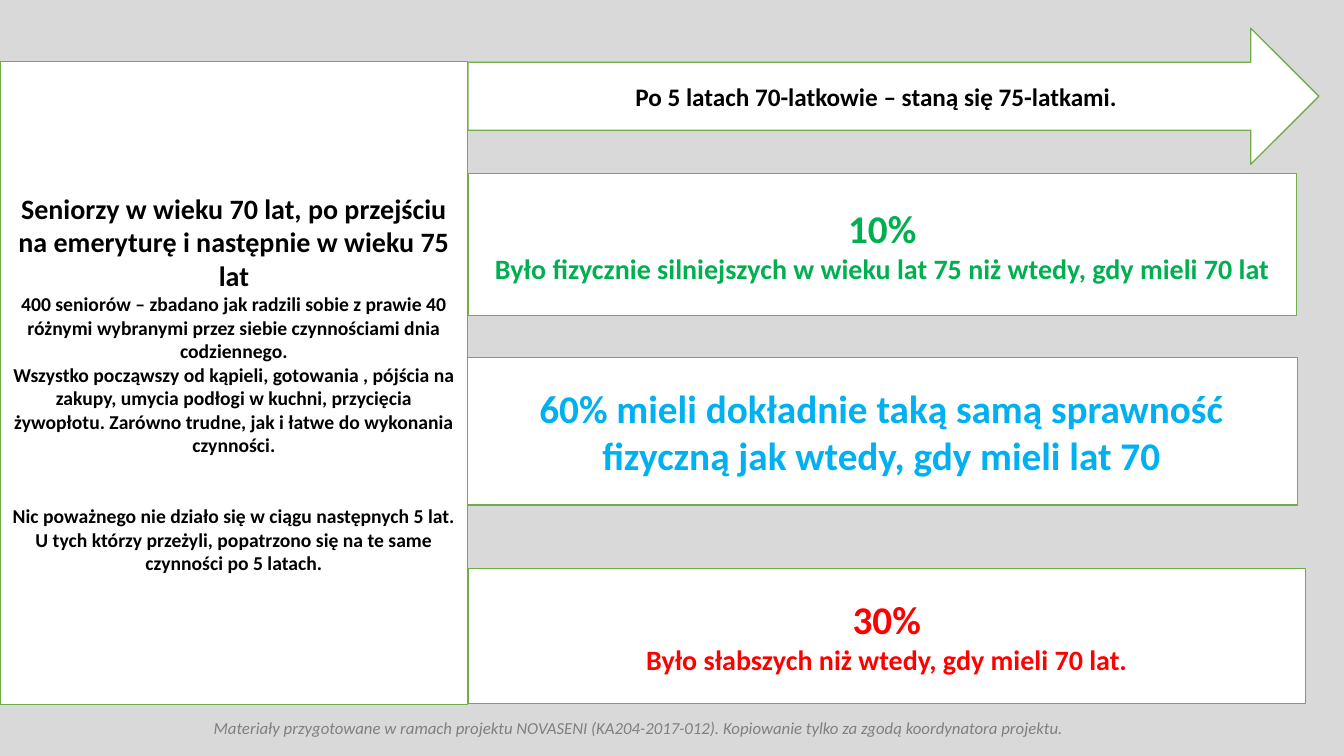
from pptx import Presentation
from pptx import util as u
from pptx.dml.color import RGBColor
from pptx.enum import shapes, text

WHITE = RGBColor(0xFF, 0xFF, 0xFF)
BLACK = RGBColor(0, 0, 0)
BACK = RGBColor(0xD9, 0xD9, 0xD9)
EDGE = RGBColor(0x70, 0xAD, 0x47)
GREEN = RGBColor(0x00, 0xB0, 0x50)
BLUE = RGBColor(0x00, 0xB0, 0xF0)
RED = RGBColor(0xFF, 0, 0)
GRAY = RGBColor(0x80, 0x80, 0x80)

RECT = shapes.MSO_SHAPE.RECTANGLE
ARROW = shapes.MSO_SHAPE.RIGHT_ARROW


class Board:
    """Holds the style and the slide being filled."""

    face = "Calibri"

    def __init__(self, deck):
        self.slide = deck.slides.add_slide(deck.slide_layouts[6])
        fill = self.slide.background.fill
        fill.solid()
        fill.fore_color.rgb = BACK

    def put_text(self, frame, lines, color, align, **style):
        """Each line is (words, size) or (words, size, space before)."""
        frame.word_wrap = True
        for i, (words, size, *gap) in enumerate(lines):
            para = frame.paragraphs[0] if i == 0 else frame.add_paragraph()
            para.alignment = align
            if gap:
                para.space_before = u.Pt(gap[0])
            run = para.add_run()
            run.text = words
            run.font.color.rgb = color
            form = {"name": self.face, "size": u.Pt(size), **style}
            for key, value in form.items():
                setattr(run.font, key, value)

    def panel(self, kind, box, lines, color):
        shape = self.slide.shapes.add_shape(kind, *map(u.Inches, box))
        shape.shadow.inherit = False
        shape.fill.solid()
        shape.fill.fore_color.rgb = WHITE
        shape.line.color.rgb = EDGE
        shape.line.width = u.Pt(1)
        shape.text_frame.vertical_anchor = text.MSO_ANCHOR.MIDDLE
        self.put_text(shape.text_frame, lines, color,
                      text.PP_ALIGN.CENTER, bold=True)

    def note(self, box, words, size):
        label = self.slide.shapes.add_textbox(*map(u.Inches, box))
        self.put_text(label.text_frame, [(words, size)], GRAY,
                      text.PP_ALIGN.LEFT, italic=True)


def main():
    deck = Presentation()
    deck.slide_width = u.Inches(13.33)
    deck.slide_height = u.Inches(7.5)
    board = Board(deck)

    # Results after five years
    results = [
        ((4.64, 1.72, 8.22, 1.41), GREEN,
         [("10%", 28),
          ("Było fizycznie silniejszych w wieku lat 75 niż wtedy, "
           "gdy mieli 70 lat", 20)]),
        ((4.61, 3.55, 8.26, 1.46), BLUE,
         [("60% mieli dokładnie taką samą sprawność fizyczną "
           "jak wtedy, gdy mieli lat 70", 28)]),
        ((4.64, 5.64, 8.31, 1.34), RED,
         [("30%", 28),
          ("Było słabszych niż wtedy, gdy mieli 70 lat.", 20)]),
    ]
    for box, color, lines in results:
        board.panel(RECT, box, lines, color)

    # Time arrow
    board.panel(ARROW, (4.64, 0.28, 8.44, 1.35),
                [("Po 5 latach 70-latkowie – staną się 75-latkami.", 18)],
                BLACK)

    # Study group
    board.panel(RECT, (0, 0.61, 4.64, 6.38), [
        ("Seniorzy w wieku 70 lat, po przejściu na emeryturę "
         "i następnie w wieku 75 lat", 20),
        ("400 seniorów – zbadano jak radzili sobie z prawie 40 różnymi "
         "wybranymi przez siebie czynnościami dnia codziennego.", 14),
        ("Wszystko począwszy od kąpieli, gotowania , pójścia na zakupy, "
         "umycia podłogi w kuchni, przycięcia żywopłotu. Zarówno trudne, "
         "jak i łatwe do wykonania czynności.", 14),
        ("Nic poważnego nie działo się w ciągu następnych 5 lat. "
         "U tych którzy przeżyli, popatrzono się na te same czynności "
         "po 5 latach.", 14, 34),
    ], BLACK)

    # Footer
    board.note((2.02, 7.07, 9.38, 0.3),
               "Materiały przygotowane w ramach projektu NOVASENI "
               "(KA204-2017-012). Kopiowanie tylko za zgodą "
               "koordynatora projektu.", 12)

    deck.save("out.pptx")


if __name__ == "__main__":
    main()
